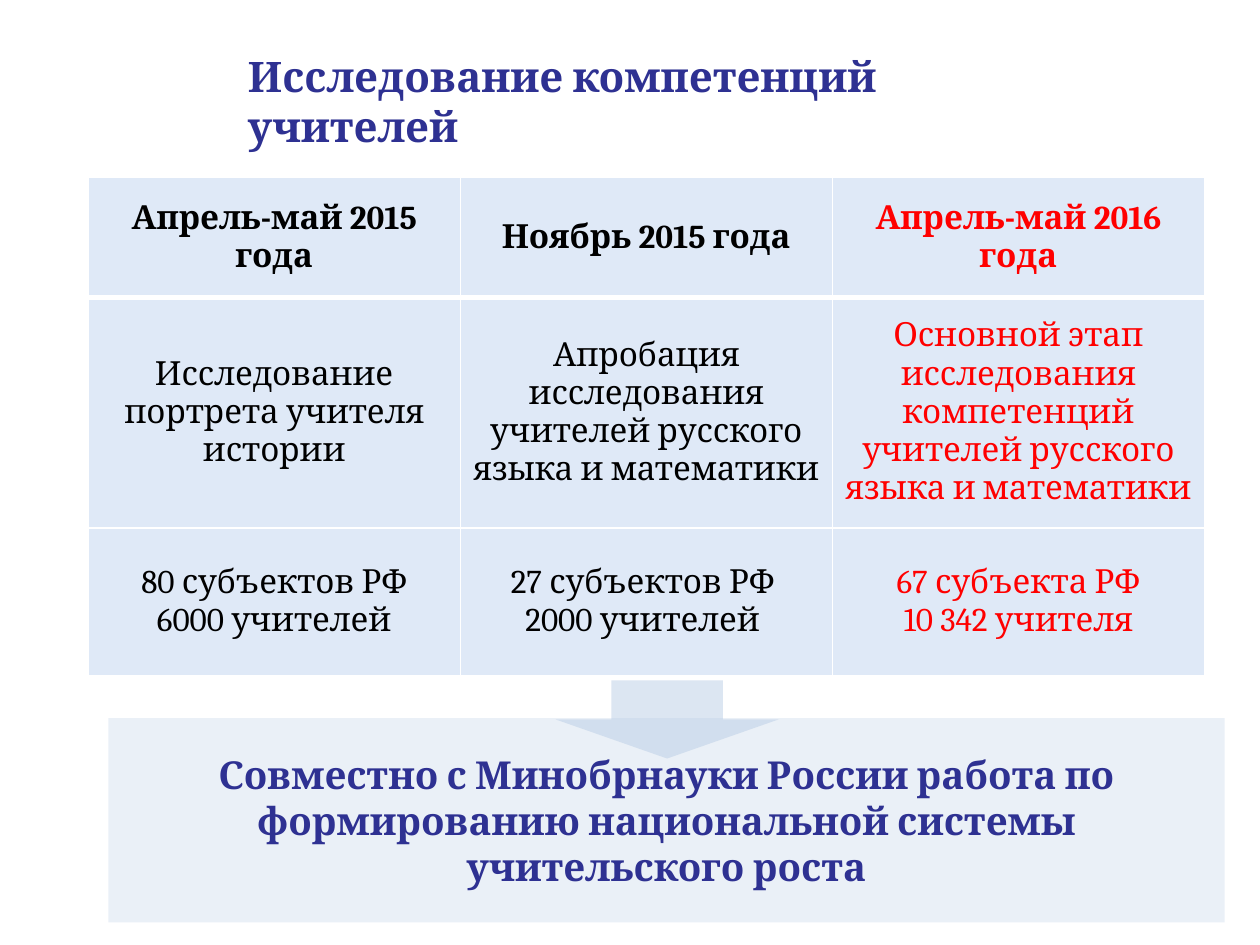
from lxml import etree
from pptx import Presentation
from pptx.dml.color import RGBColor
from pptx.enum.shapes import MSO_SHAPE
from pptx.enum.text import MSO_ANCHOR, PP_ALIGN
from pptx.oxml.ns import qn
from pptx.util import Inches, Pt

NAVY = RGBColor(0x2E, 0x31, 0x92)
BLACK = RGBColor(0, 0, 0)
RED = RGBColor(0xFF, 0, 0)
WHITE = RGBColor(0xFF, 0xFF, 0xFF)
ICE = RGBColor(0xC6, 0xD9, 0xF1)
PALE = RGBColor(0xDC, 0xE6, 0xF2)
STEEL = RGBColor(0xB9, 0xCD, 0xE5)
MIDDLE = MSO_ANCHOR.MIDDLE
CENTER = PP_ALIGN.CENTER
LEFT = PP_ALIGN.LEFT

ROWS = [
    ["Апрель-май 2015 года", "Ноябрь 2015 года", "Апрель-май 2016 года"],
    ["Исследование портрета учителя истории",
     "Апробация исследования учителей русского языка и математики",
     "Основной этап исследования компетенций учителей русского языка и математики"],
    ["80 субъектов РФ\n6000 учителей", "27 субъектов РФ \n2000 учителей ",
     "67 субъекта РФ\n10 342 учителя"],
]
HEIGHTS = [0.95, 1.83, 1.17]


def write(frame, text, size, color, bold, align=CENTER):
    """Fill a text frame, one paragraph per line of text."""
    frame.word_wrap = True
    for i, line in enumerate(text.split("\n")):
        para = frame.paragraphs[0] if i == 0 else frame.add_paragraph()
        para.alignment = align
        run = para.add_run()
        run.text = line
        run.font.name = "Cambria"
        run.font.size = Pt(size)
        run.font.bold = bold
        run.font.color.rgb = color


def fade(fill, color, percent):
    """Set a solid fill with the given opacity and return its XML node."""
    fill.solid()
    fill.fore_color.rgb = color
    node = fill._xPr.find(qn("a:solidFill"))
    etree.SubElement(node[0], qn("a:alpha"), val=str(percent * 1000))
    return node


prs = Presentation()
prs.slide_width = Inches(10)
prs.slide_height = Inches(7.5)
slide = prs.slides.add_slide(prs.slide_layouts[6])
shapes = slide.shapes

# Title with a soft text shadow
title = shapes.add_textbox(Inches(1.87), Inches(0.55), Inches(6.9), Inches(0.5))
title.text_frame.vertical_anchor = MIDDLE
write(title.text_frame, "Исследование компетенций учителей", 24, NAVY, True, LEFT)
props = title.text_frame.paragraphs[0].runs[0].font._element
effect = etree.Element(qn("a:effectLst"))
shadow = etree.SubElement(effect, qn("a:outerShdw"), blurRad="38100",
                          dist="38100", dir="5400000", algn="tl")
black = etree.SubElement(shadow, qn("a:srgbClr"), val="000000")
etree.SubElement(black, qn("a:alpha"), val="43000")
props.find(qn("a:solidFill")).addnext(effect)

# Arrow from the table down to the conclusion
arrow = shapes.add_shape(MSO_SHAPE.DOWN_ARROW, Inches(4.41), Inches(5.4),
                         Inches(1.77), Inches(0.62))
arrow.shadow.inherit = False
arrow.fill.solid()
arrow.fill.fore_color.rgb = PALE
arrow.line.fill.background()

panel = shapes.add_shape(MSO_SHAPE.RECTANGLE, Inches(0.86), Inches(5.7),
                         Inches(8.86), Inches(1.62))
panel.shadow.inherit = False
fade(panel.fill, STEEL, 29)
panel.line.fill.background()
panel.text_frame.vertical_anchor = MIDDLE
write(panel.text_frame,
      "Совместно с Минобрнауки России работа по формированию "
      "национальной системы учительского роста", 22, NAVY, True)

# Research stages
table = shapes.add_table(3, 3, Inches(0.7), Inches(1.41),
                         Inches(8.86), Inches(sum(HEIGHTS))).table
for r, texts in enumerate(ROWS):
    table.rows[r].height = Inches(HEIGHTS[r])
    for c, text in enumerate(texts):
        cell = table.cell(r, c)
        cell.vertical_anchor = MIDDLE
        write(cell.text_frame, text, 19, RED if c == 2 else BLACK, r == 0)
        solid = fade(cell.fill, ICE, 56)
        widths = {"L": 1, "R": 1, "T": 3 if r == 1 else 1, "B": 3 if r == 0 else 1}
        for side, width in widths.items():
            line = etree.Element(qn("a:ln" + side), w=str(Pt(width)))
            paint = etree.SubElement(line, qn("a:solidFill"))
            etree.SubElement(paint, qn("a:srgbClr"), val=str(WHITE))
            solid.addprevious(line)

prs.save("out.pptx")
